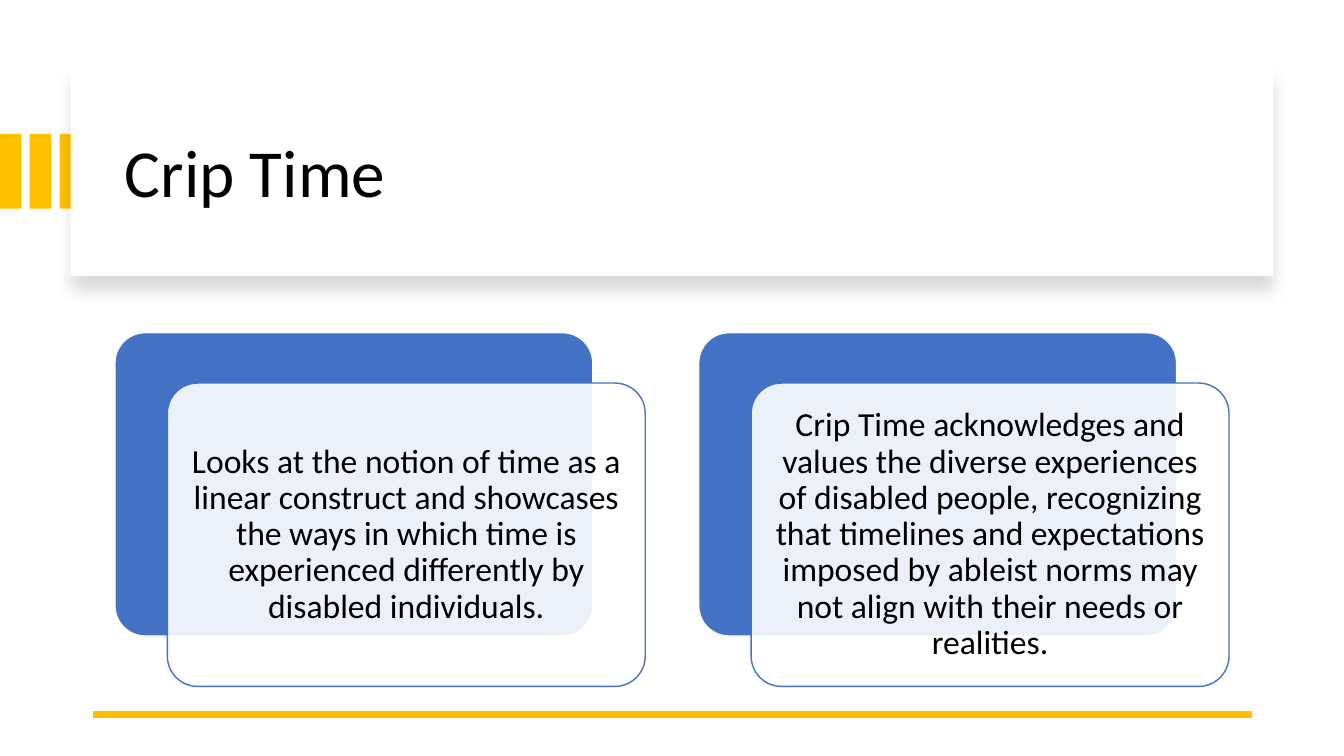
from lxml import etree
from pptx import Presentation
from pptx.dml.color import RGBColor
from pptx.enum.shapes import MSO_CONNECTOR, MSO_SHAPE
from pptx.enum.text import MSO_ANCHOR, PP_ALIGN
from pptx.oxml.ns import qn
from pptx.util import Inches, Pt

RECT, ROUNDED = MSO_SHAPE.RECTANGLE, MSO_SHAPE.ROUNDED_RECTANGLE
STRAIGHT = MSO_CONNECTOR.STRAIGHT
MIDDLE = MSO_ANCHOR.MIDDLE
LEFT, CENTER = PP_ALIGN.LEFT, PP_ALIGN.CENTER

BLACK = RGBColor(0x00, 0x00, 0x00)
WHITE = RGBColor(0xFF, 0xFF, 0xFF)
GOLD = RGBColor(0xFF, 0xC0, 0x00)
BLUE = RGBColor(0x44, 0x72, 0xC4)

STATEMENTS = [
    "Looks at the notion of time as a linear construct and showcases the ways "
    "in which time is experienced differently by disabled individuals.",
    "Crip Time acknowledges and values the diverse experiences of disabled "
    "people, recognizing that timelines and expectations imposed by ableist "
    "norms may not align with their needs or realities.",
]


class SlideBuilder:
    font_name = "Calibri"

    def __init__(self, slide):
        self.slide = slide

    def panel(self, kind, box, fill, outline=None, opacity=100):
        shape = self.slide.shapes.add_shape(kind, *map(Inches, box))
        shape.shadow.inherit = False
        shape.fill.solid()
        shape.fill.fore_color.rgb = fill
        if opacity < 100:
            color = shape.fill._xPr.find(qn("a:solidFill"))[0]
            etree.SubElement(color, qn("a:alpha"), val=str(opacity * 1000))
        if outline is None:
            shape.line.fill.background()
        else:
            shape.line.color.rgb = outline
            shape.line.width = Pt(1)
        if kind == ROUNDED:
            shape.adjustments[0] = 0.1
        return shape

    def drop_shadow(self, shape, opacity, blur, distance):
        effects = shape.fill._xPr.find(qn("a:effectLst"))
        shadow = etree.SubElement(
            effects, qn("a:outerShdw"), blurRad=str(Pt(blur)),
            dist=str(Pt(distance)), dir="5400000", algn="t", rotWithShape="0")
        color = etree.SubElement(shadow, qn("a:srgbClr"), val=str(BLACK))
        etree.SubElement(color, qn("a:alpha"), val=str(opacity * 1000))

    def text(self, box, words, size, align, inset_x=0.1, inset_y=0.1):
        frame = self.slide.shapes.add_textbox(*map(Inches, box)).text_frame
        paragraph = frame.paragraphs[0]
        run = paragraph.add_run()
        run.text = words
        run.font.color.rgb = BLACK
        formats = {
            frame: {"word_wrap": True, "vertical_anchor": MIDDLE,
                    "margin_left": Inches(inset_x), "margin_right": Inches(inset_x),
                    "margin_top": Inches(inset_y), "margin_bottom": Inches(inset_y)},
            paragraph: {"alignment": align, "line_spacing": 0.9},
            run.font: {"name": self.font_name, "size": Pt(size)},
        }
        for target, values in formats.items():
            for name, value in values.items():
                setattr(target, name, value)

    def rule(self, start, end, color, width):
        line = self.slide.shapes.add_connector(STRAIGHT, *map(Inches, start + end))
        line.line.color.rgb = color
        line.line.width = Pt(width)
        etree.SubElement(line.line._ln.getparent(), qn("a:effectLst"))


def main():
    deck = Presentation()
    deck.slide_width, deck.slide_height = Inches(13.33), Inches(7.5)
    builder = SlideBuilder(deck.slides.add_slide(deck.slide_layouts[6]))

    # Gold bars at the left edge, the last one tucked under the title card
    for i in range(3):
        builder.panel(RECT, (i * 0.295, 1.33, 0.21, 0.74), GOLD)

    # Title card
    title_card = builder.panel(RECT, (0.7, 0.67, 11.93, 2.07), WHITE)
    builder.drop_shadow(title_card, opacity=15, blur=11, distance=10)
    builder.text((1.14, 0.89, 11.13, 1.7), "Crip Time", 48, LEFT, inset_y=0.05)

    # Bottom rule
    builder.rule((12.42, 7.09), (0.92, 7.09), GOLD, 4.5)

    # Statement cards, each in front of an offset blue backing
    width, height, inset = 4.74, 3.01, 0.09
    for i, statement in enumerate(STATEMENTS):
        left, top = 1.14 + i * 5.79, 3.3
        builder.panel(ROUNDED, (left, top, width, height), BLUE, WHITE)
        left, top = left + 0.52, top + 0.5
        builder.panel(ROUNDED, (left, top, width, height), WHITE, BLUE, opacity=90)
        builder.text((left + inset, top + inset, width - 2 * inset, height - 2 * inset),
                     statement, 24, CENTER)

    deck.save("out.pptx")


if __name__ == "__main__":
    main()
